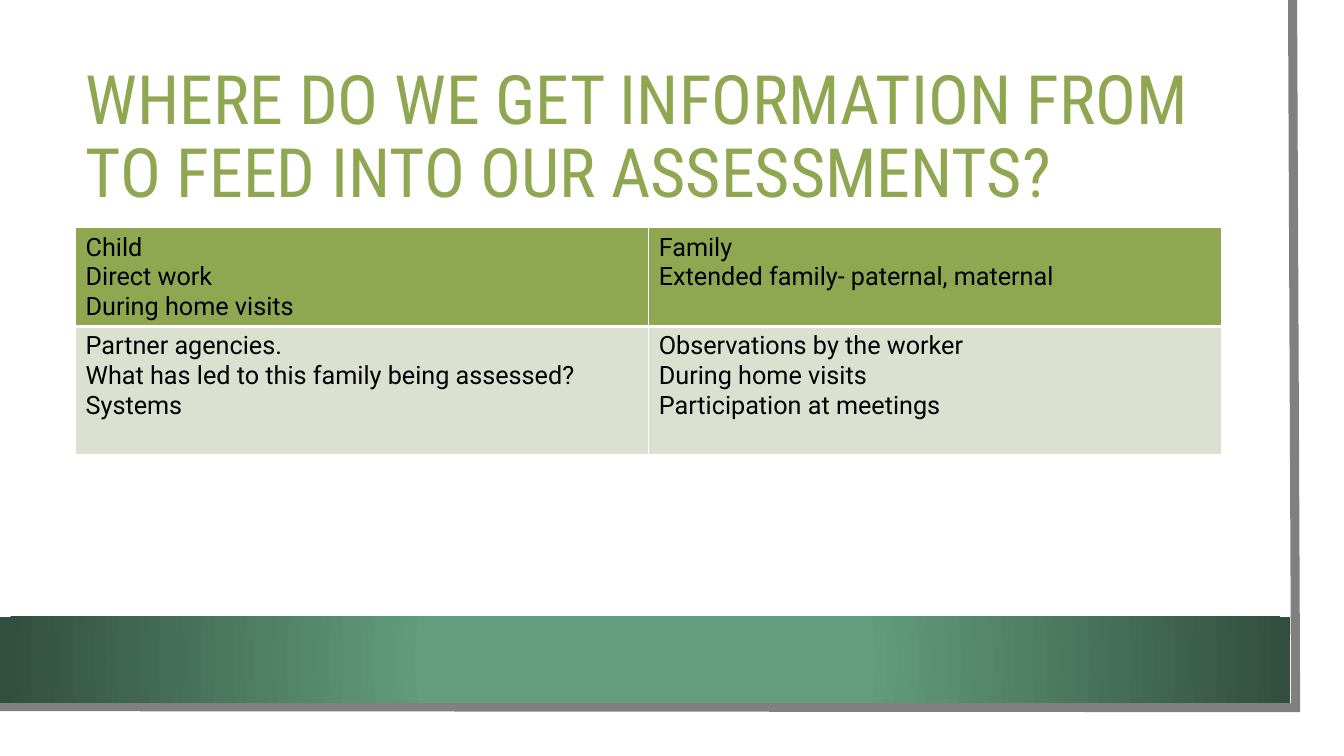
"""Build the slide on information sources for assessments."""
import pptx
import pptx.util
import pptx.oxml
import pptx.oxml.ns
import pptx.dml.color
import pptx.enum.shapes
import pptx.enum.text
from pptx.util import Inches, Pt

HUES = {"white": "FFFFFF", "grey": "808080", "green": "8FA751",
        "pale": "DBE1D0", "mid": "629D7D", "dark": "314E3E", "black": "000000"}
NS = pptx.oxml.ns.nsdecls("a")


def hue(name):
    return pptx.dml.color.RGBColor.from_string(HUES[name])


def style(frame, font, size, color):
    for para in frame.paragraphs:
        for run in para.runs:
            run.font.name = font
            run.font.size = Pt(size)
            run.font.bold = False
            run.font.color.rgb = hue(color)


deck = pptx.Presentation()
deck.slide_width = Inches(13.33)
deck.slide_height = Inches(7.5)
slide = deck.slides.add_slide(deck.slide_layouts[5])
shapes = slide.shapes

path = shapes.build_freeform(Inches(12.82), 0)
path.add_line_segments([(Inches(12.85), Inches(7.02)),
                        (Inches(-0.03), Inches(7.01))], close=False)
edge = path.convert_to_shape()
edge.shadow.inherit = False
edge.fill.background()
edge.line.color.rgb = hue("grey")
edge.line.width = Pt(6.5)
edge.line._get_or_add_ln().append(
    pptx.oxml.parse_xml(f'<a:miter {NS} lim="800000"/>'))

band = shapes.add_shape(pptx.enum.shapes.MSO_SHAPE.RECTANGLE,
                        0, Inches(6.12), Inches(12.8), Inches(0.85))
band.shadow.inherit = False
band.line.fill.background()
band.fill.gradient()
grad = band.element.spPr.find(pptx.oxml.ns.qn("a:gradFill"))
grad.getparent().replace(grad, pptx.oxml.parse_xml(
    f'<a:gradFill {NS} rotWithShape="1"><a:gsLst>'
    f'<a:gs pos="34000"><a:srgbClr val="{HUES["mid"]}"/></a:gs>'
    f'<a:gs pos="100000"><a:srgbClr val="{HUES["dark"]}"/></a:gs></a:gsLst>'
    '<a:path path="circle"><a:fillToRect l="50000" t="50000" r="50000" b="50000"/>'
    '</a:path></a:gradFill>'))

title = shapes.title
title.left, title.top = Inches(0.75), Inches(0.75)
title.width, title.height = Inches(11.37), Inches(1.26)
frame = title.text_frame
frame.text = "WHERE DO WE GET INFORMATION FROM TO FEED INTO OUR ASSESSMENTS?"
frame.word_wrap = True
frame.auto_size = pptx.enum.text.MSO_AUTO_SIZE.NONE
frame.vertical_anchor = pptx.enum.text.MSO_ANCHOR.MIDDLE
frame.paragraphs[0].alignment = pptx.enum.text.PP_ALIGN.LEFT
frame.paragraphs[0].line_spacing = 0.9
style(frame, "Roboto Condensed", 48.6, "green")

cells = [
    ["Child\nDirect work\nDuring home visits",
     "Family\nExtended family- paternal, maternal"],
    ["Partner agencies.\nWhat has led to this family being assessed?\nSystems",
     "Observations by the worker\nDuring home visits\nParticipation at meetings"],
]
looks = [(0.97, "green", 3), (1.27, "pale", 1)]
table = shapes.add_table(2, 2, Inches(0.75), Inches(2.26),
                         Inches(11.37), Inches(2.24)).table
for row, (high, fill, base) in enumerate(looks):
    table.rows[row].height = Inches(high)
    top = looks[row - 1][2] if row else 1
    for col, text in enumerate(cells[row]):
        cell = table.cell(row, col)
        cell.text_frame.text = text
        style(cell.text_frame, "Roboto", 18, "black")
        cell.fill.solid()
        cell.fill.fore_color.rgb = hue(fill)
        props = cell._tc.get_or_add_tcPr()
        for spot, (side, wide) in enumerate(zip("LRTB", (1, 1, top, base))):
            props.insert(spot, pptx.oxml.parse_xml(
                f'<a:ln{side} {NS} w="{Pt(wide)}"><a:solidFill>'
                f'<a:srgbClr val="{HUES["white"]}"/></a:solidFill></a:ln{side}>'))

deck.save("out.pptx")
